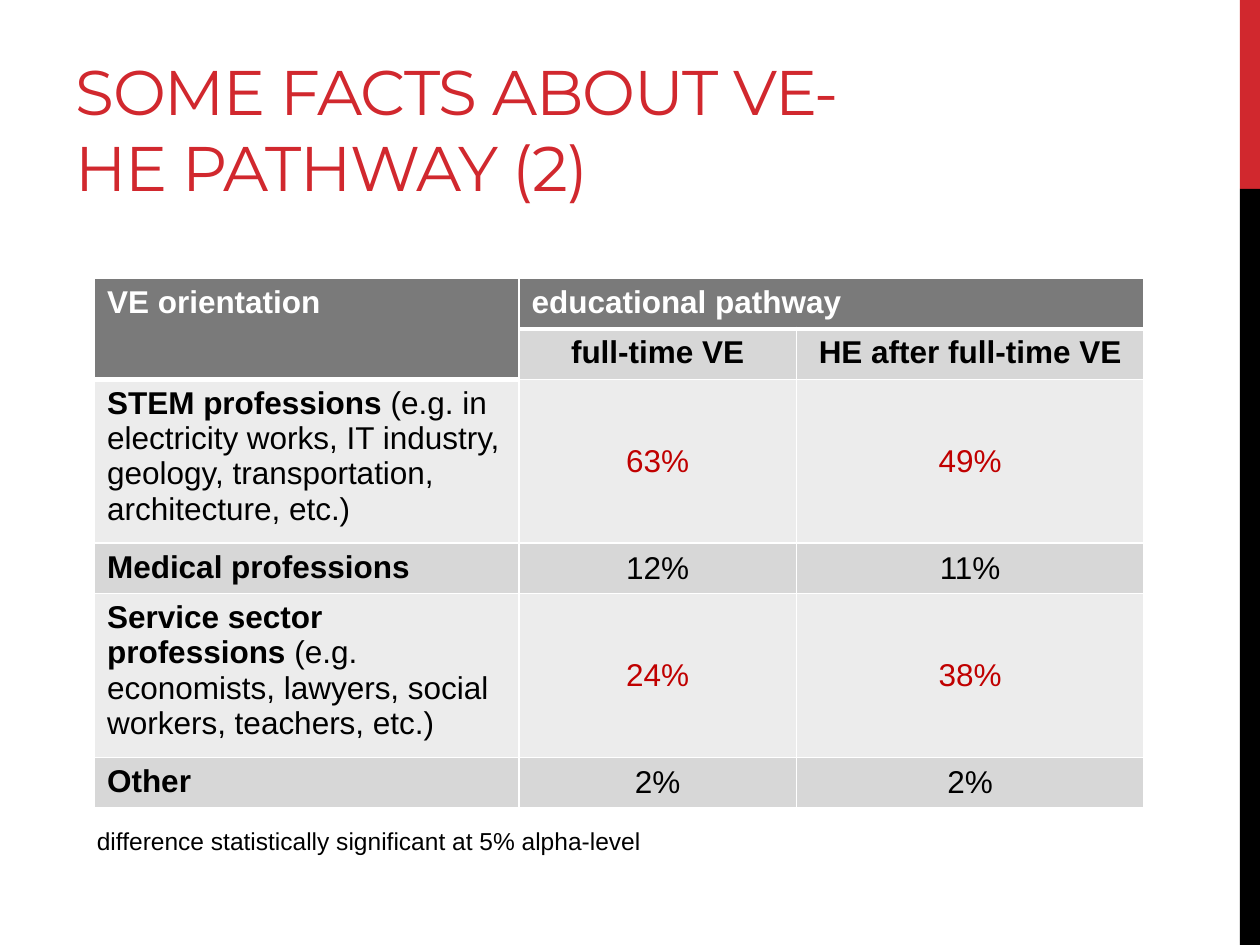
"""Build the slide comparing VE orientation across educational pathways."""
from lxml import etree
from pptx import Presentation
from pptx.dml.color import RGBColor
from pptx.enum.shapes import MSO_SHAPE
from pptx.enum.text import MSO_ANCHOR, PP_ALIGN
from pptx.oxml.ns import qn
from pptx.util import Inches, Pt

RECTANGLE = MSO_SHAPE.RECTANGLE
TOP, MIDDLE, BOTTOM = MSO_ANCHOR.TOP, MSO_ANCHOR.MIDDLE, MSO_ANCHOR.BOTTOM
LEFT, CENTER = PP_ALIGN.LEFT, PP_ALIGN.CENTER
RED, BLACK, WHITE, ACCENT = "D1282E", "000000", "FFFFFF", "C00000"
HEADER, DARK_BAND, LIGHT_BAND = "7A7A7A", "D7D7D7", "ECECEC"


def color(value):
    return RGBColor.from_string(value)


def add_span(para, text, size, fill, bold=False, font="Arial"):
    span = para.add_run()
    span.text = text
    span.font.name, span.font.size, span.font.bold = font, Pt(size), bold
    span.font.color.rgb = color(fill)
    return span


deck = Presentation()
deck.slide_width, deck.slide_height = Inches(10), Inches(7.5)
page = deck.slides.add_slide(deck.slide_layouts[6])

bar_width = Inches(0.16)
bar_split = int(deck.slide_height * 0.2)
for top, bottom, fill in [(0, bar_split, RED), (bar_split, deck.slide_height, BLACK)]:
    bar = page.shapes.add_shape(
        RECTANGLE, deck.slide_width - bar_width, top, bar_width, bottom - top)
    bar.shadow.inherit = False
    bar.fill.solid()
    bar.fill.fore_color.rgb = color(fill)
    bar.line.fill.background()

title_box = page.shapes.add_textbox(Inches(0.5), Inches(0.17), Inches(6.33), Inches(1.5))
title_box.text_frame.word_wrap = True
title_box.text_frame.vertical_anchor = BOTTOM
title = add_span(title_box.text_frame.paragraphs[0], "SOME FACTS ABOUT VE-HE PATHWAY (2)",
                 36, RED, font="Montserrat")
title.font._element.set("spc", "-60")

columns = [3.37, 2.2, 2.76]
rows = [0.38, 0.38, 1.21, 0.38, 1.21, 0.38]
professions = [
    ("STEM professions ",
     "(e.g. in electricity works, IT industry, geology, transportation, architecture, etc.)",
     "63%", "49%"),
    ("Medical professions", "", "12%", "11%"),
    ("Service sector professions ",
     "(e.g. economists, lawyers, social workers, teachers, etc.)", "24%", "38%"),
    ("Other", "", "2%", "2%"),
]
table = page.shapes.add_table(len(rows), len(columns), Inches(0.75), Inches(2.21),
                              Inches(sum(columns)), Inches(sum(rows))).table
table.first_row = table.horz_banding = False
for column, width in zip(table.columns, columns):
    column.width = Inches(width)
for row, height in zip(table.rows, rows):
    row.height = Inches(height)
table.cell(0, 0).merge(table.cell(1, 0))
table.cell(0, 1).merge(table.cell(0, 2))

for r in range(len(rows)):
    for c in range(len(columns)):
        cell = table.cell(r, c)
        header = r == 0 or (r == 1 and c == 0)
        below_header = (r == 1 and c > 0) or (r == 2 and c == 0)
        properties = cell._tc.get_or_add_tcPr()
        widths = {"lnL": 1, "lnR": 1, "lnT": 3 if below_header else 1, "lnB": 3 if header else 1}
        for side, width in widths.items():
            border = etree.SubElement(properties, qn(f"a:{side}"), w=str(Pt(width)))
            solid = etree.SubElement(border, qn("a:solidFill"))
            etree.SubElement(solid, qn("a:srgbClr"), val=WHITE)
        cell.fill.solid()
        cell.fill.fore_color.rgb = color(
            HEADER if header else DARK_BAND if r % 2 else LIGHT_BAND)
        cell.vertical_anchor = MIDDLE if r > 1 and c > 0 else TOP
        cell.text_frame.paragraphs[0].alignment = CENTER if r > 0 and c > 0 else LEFT

headings = [(0, 0, "VE orientation", WHITE), (0, 1, "educational pathway", WHITE),
            (1, 1, "full-time VE", BLACK), (1, 2, "HE after full-time VE", BLACK)]
for r, c, text, fill in headings:
    add_span(table.cell(r, c).text_frame.paragraphs[0], text, 18, fill, bold=True)

for r, (name, examples, *shares) in enumerate(professions, start=2):
    para = table.cell(r, 0).text_frame.paragraphs[0]
    add_span(para, name, 18, BLACK, bold=True)
    if examples:
        add_span(para, examples, 18, BLACK)
    for c, share in enumerate(shares, start=1):
        add_span(table.cell(r, c).text_frame.paragraphs[0], share, 18,
                 ACCENT if examples else BLACK)

note_box = page.shapes.add_textbox(Inches(0.67), Inches(6.51), Inches(4.58), Inches(0.34))
note_box.text_frame.word_wrap = False
add_span(note_box.text_frame.paragraphs[0],
         "difference statistically significant at 5% alpha-level", 14, BLACK)

deck.save("out.pptx")
